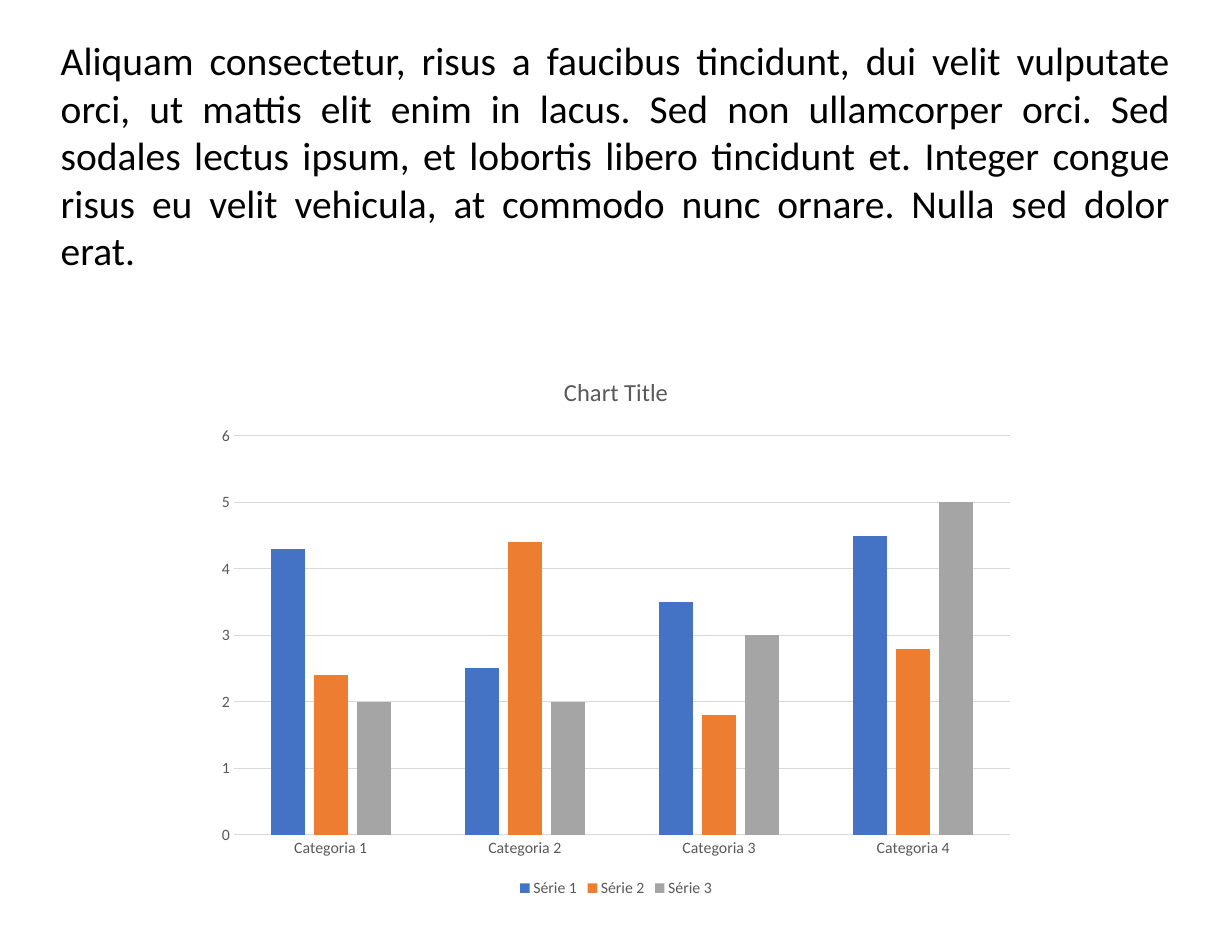
from pptx import Presentation
from pptx.chart.data import CategoryChartData
from pptx.dml.color import RGBColor
from pptx.enum import chart as ch, text as tx
from pptx.util import Pt

FONT = "Calibri"
COLORS = {"body": "000000", "label": "595959", "grid": "D9D9D9"}
CATEGORIES = [f"Categoria {n}" for n in range(1, 5)]
# Series name: (values, fill colour)
SERIES = {
    "Série 1": ((4.3, 2.5, 3.5, 4.5), "4472C4"),
    "Série 2": ((2.4, 4.4, 1.8, 2.8), "ED7D31"),
    "Série 3": ((2, 2, 3, 5), "A5A5A5"),
}
INTRO = (
    "Aliquam consectetur, risus a faucibus tincidunt, dui velit vulputate orci, "
    "ut mattis elit enim in lacus. Sed non ullamcorper orci. Sed sodales lectus "
    "ipsum, et lobortis libero tincidunt et. Integer congue risus eu velit "
    "vehicula, at commodo nunc ornare. Nulla sed dolor erat."
)


def style_font(font, size, color):
    font.name = FONT
    font.size = Pt(size)
    font.bold = False
    font.color.rgb = RGBColor.from_string(color)


def style_line(line):
    line.color.rgb = RGBColor.from_string(COLORS["grid"])
    line.width = Pt(0.75)


def add_intro(slide, left, top, width, height):
    frame = slide.shapes.add_textbox(Pt(left), Pt(top), Pt(width), Pt(height)).text_frame
    frame.word_wrap = True
    frame.auto_size = tx.MSO_AUTO_SIZE.SHAPE_TO_FIT_TEXT
    paragraph = frame.paragraphs[0]
    paragraph.text = INTRO
    paragraph.alignment = tx.PP_ALIGN.JUSTIFY
    style_font(paragraph.font, 30, COLORS["body"])


def style_axis(axis):
    axis.major_tick_mark = axis.minor_tick_mark = ch.XL_TICK_MARK.NONE
    style_font(axis.tick_labels.font, 12, COLORS["label"])


def add_column_chart(slide, left, top, width, height):
    data = CategoryChartData()
    data.categories = CATEGORIES
    for name, (values, _) in SERIES.items():
        data.add_series(name, values)
    chart = slide.shapes.add_chart(
        ch.XL_CHART_TYPE.COLUMN_CLUSTERED, Pt(left), Pt(top), Pt(width), Pt(height), data
    ).chart
    style_font(chart.font, 10, COLORS["body"])

    # Title and legend
    chart.has_title = True
    heading = chart.chart_title.text_frame.paragraphs[0]
    heading.text = "Chart Title"
    style_font(heading.font, 18.6, COLORS["label"])
    chart.chart_title.include_in_layout = False
    chart.has_legend = True
    chart.legend.position = ch.XL_LEGEND_POSITION.BOTTOM
    chart.legend.include_in_layout = False
    style_font(chart.legend.font, 12, COLORS["label"])

    # Axes
    for axis in (chart.category_axis, chart.value_axis):
        style_axis(axis)
    style_line(chart.category_axis.format.line)
    chart.value_axis.format.line.fill.background()
    chart.value_axis.has_major_gridlines = True
    style_line(chart.value_axis.major_gridlines.format.line)
    chart.value_axis.minimum_scale = 0
    chart.value_axis.maximum_scale = 6
    chart.value_axis.major_unit = 1

    # Columns
    plot = chart.plots[0]
    plot.vary_by_categories = False
    plot.gap_width = 219
    plot.overlap = -27
    for series, (_, color) in zip(plot.series, SERIES.values()):
        series.format.fill.solid()
        series.format.fill.fore_color.rgb = RGBColor.from_string(color)


def main():
    deck = Presentation()
    deck.slide_width, deck.slide_height = Pt(935.3), Pt(708.5)
    slide = deck.slides.add_slide(deck.slide_layouts[6])
    add_intro(slide, 39, 24, 857, 189.5)
    add_column_chart(slide, 156, 269, 623.5, 415.5)
    deck.save("out.pptx")


if __name__ == "__main__":
    main()
